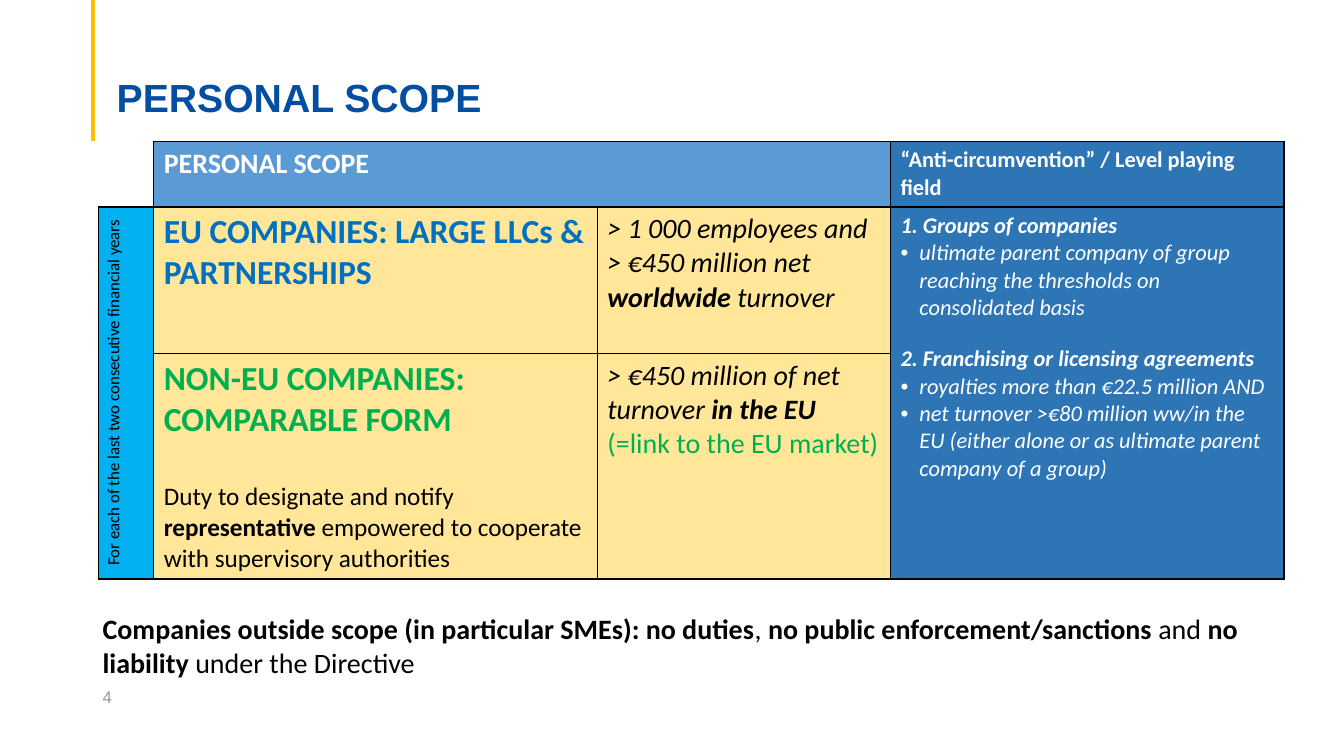
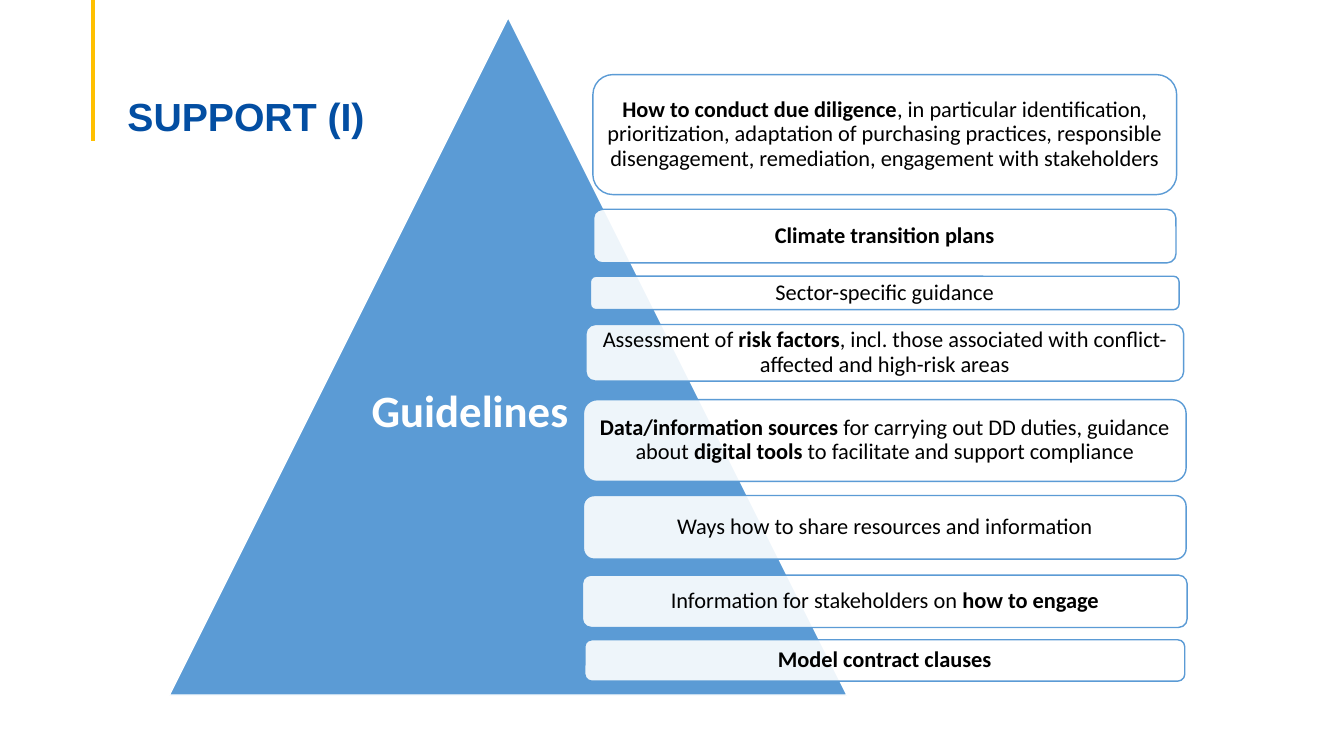
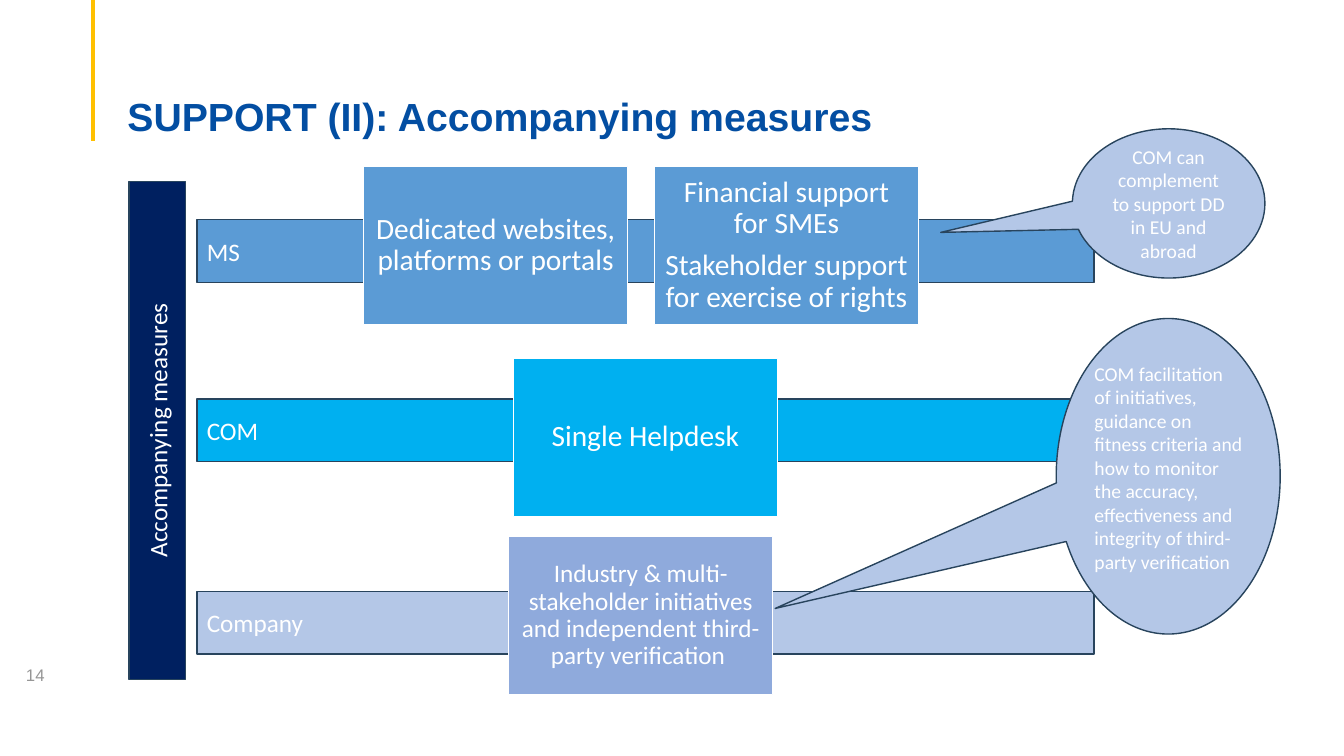
from dataclasses import dataclass
from typing import NamedTuple, Optional

from lxml import etree
from pptx import Presentation
from pptx.dml.color import RGBColor
from pptx.enum.shapes import MSO_CONNECTOR, MSO_SHAPE
from pptx.enum.text import MSO_ANCHOR, PP_ALIGN
from pptx.oxml.ns import qn
from pptx.util import Pt

LEFT, CENTER = PP_ALIGN.LEFT, PP_ALIGN.CENTER
TOP, MIDDLE, BOTTOM = MSO_ANCHOR.TOP, MSO_ANCHOR.MIDDLE, MSO_ANCHOR.BOTTOM
RECT, ROUND_RECT = MSO_SHAPE.RECTANGLE, MSO_SHAPE.ROUNDED_RECTANGLE
TRIANGLE, CALLOUT = MSO_SHAPE.ISOSCELES_TRIANGLE, MSO_SHAPE.OVAL_CALLOUT
STRAIGHT = MSO_CONNECTOR.STRAIGHT

BLACK, WHITE, GREY = "000000", "FFFFFF", "969696"
TITLE_BLUE, GOLD = "034EA2", "FFC000"
BLUE, DARK_BLUE, CYAN, NAVY = "5B9BD5", "2E75B6", "00B0F0", "002060"
PALE_BLUE, SOFT_BLUE, OUTLINE = "B4C7E7", "8FAADC", "28445D"
CREAM, EU_BLUE, GREEN = "FFE699", "0070C0", "00B050"

INSETS = (7.2, 3.6, 7.2, 3.6)


class Run(NamedTuple):
    """A piece of text; None takes the format of its text box."""
    text: str
    bold: Optional[bool] = None
    italic: Optional[bool] = None
    color: Optional[str] = None
    size: Optional[float] = None


@dataclass
class Para:
    runs: list[Run]
    before: float = 0
    bullet: bool = False


class TableCell(NamedTuple):
    row: int
    col: int
    last_row: int
    last_col: int
    fill: str
    paras: list[Para]
    format: dict


class Guideline(NamedTuple):
    top: float
    width: float
    height: float
    runs: list[Run]


class Bar(NamedTuple):
    label: str
    top: float
    fill: str


class Measure(NamedTuple):
    left: float
    top: float
    fill: str
    paras: list[Para]
    size: float = 21
    inset: float = 6.5


def rgb(color: str) -> RGBColor:
    return RGBColor.from_string(color)


def bold(text: str) -> Run:
    return Run(text, bold=True)


def para(*runs, before: float = 0, bullet: bool = False) -> Para:
    return Para([r if isinstance(r, Run) else Run(r) for r in runs], before, bullet)


def add_bullet(p) -> None:
    pPr = p._p.get_or_add_pPr()
    pPr.set("marL", str(Pt(13.5)))
    pPr.set("indent", str(-Pt(13.5)))
    etree.SubElement(pPr, qn("a:buFont")).set("typeface", "Arial")
    etree.SubElement(pPr, qn("a:buChar")).set("char", "•")


def write(tf, paras: list[Para], size: float = 18, color: str = BLACK, font: str = "Calibri",
          is_bold: bool = False, italic: bool = False, align=LEFT, spacing: float = 1.0) -> None:
    for i, item in enumerate(paras):
        p = tf.add_paragraph() if i else tf.paragraphs[0]
        if item.bullet:
            add_bullet(p)
        p.alignment, p.line_spacing = align, spacing
        if item.before:
            p.space_before = Pt(item.before)
        for run in item.runs:
            r = p.add_run()
            r.text = run.text
            r.font.name = font
            r.font.size = Pt(run.size or size)
            r.font.bold = is_bold if run.bold is None else run.bold
            r.font.italic = italic if run.italic is None else run.italic
            r.font.color.rgb = rgb(run.color or color)


def set_frame(tf, anchor, insets) -> None:
    tf.word_wrap = True
    tf.vertical_anchor = anchor
    tf.margin_left, tf.margin_top, tf.margin_right, tf.margin_bottom = map(Pt, insets)


def add_text(s, left, top, width, height, paras, anchor=TOP, insets=INSETS, **fmt) -> None:
    sp = s.shapes.add_textbox(Pt(left), Pt(top), Pt(width), Pt(height))
    set_frame(sp.text_frame, anchor, insets)
    write(sp.text_frame, paras, **fmt)


def add_box(s, kind, left, top, width, height, fill, line, paras=(), insets=INSETS, **fmt):
    sp = s.shapes.add_shape(kind, Pt(left), Pt(top), Pt(width), Pt(height))
    sp.shadow.inherit = False
    sp.fill.solid()
    sp.fill.fore_color.rgb = rgb(fill)
    sp.line.color.rgb = rgb(line)
    sp.line.width = Pt(1)
    set_frame(sp.text_frame, MIDDLE, insets)
    write(sp.text_frame, paras, **fmt)
    return sp


def set_opacity(sp, percent: int) -> None:
    color = sp.fill._xPr.find(qn("a:solidFill"))[0]
    etree.SubElement(color, qn("a:alpha")).set("val", str(percent * 1000))


def set_borders(cell, sides: str) -> None:
    """Draw thin black lines on the given sides, out of LRTB."""
    tcPr = cell._tc.get_or_add_tcPr()
    for i, side in enumerate(sides):
        ln = etree.Element(qn(f"a:ln{side}"), w=str(Pt(1)))
        fill = etree.SubElement(ln, qn("a:solidFill"))
        etree.SubElement(fill, qn("a:srgbClr")).set("val", BLACK)
        tcPr.insert(i, ln)


def new_slide(prs, title: str, left: float = 84, top: float = 38.2):
    s = prs.slides.add_slide(prs.slide_layouts[6])
    rule = s.shapes.add_connector(STRAIGHT, Pt(66.4), Pt(0), Pt(66.4), Pt(100.8))
    rule.line.color.rgb = rgb(GOLD)
    rule.line.width = Pt(2.25)
    etree.SubElement(rule._element.spPr, qn("a:effectLst"))
    add_text(s, left, top, 828, 62, [para(title)], anchor=BOTTOM, insets=(7.2, 3.6, 7.2, 0),
             size=28, font="Arial", color=TITLE_BLUE, is_bold=True, spacing=0.9)
    return s


def add_number(s, number: str, left: float, top: float) -> None:
    add_text(s, left, top, 216, 28.8, [para(number)], anchor=MIDDLE,
             size=12, font="Arial", color=GREY)


def scope_slide(prs) -> None:
    s = new_slide(prs, "PERSONAL SCOPE", left=76.3, top=24.5)
    add_number(s, "4", 66.2, 483)

    white_bold = dict(color=WHITE, is_bold=True)
    cells = [
        TableCell(0, 0, 0, 0, WHITE, [], {}),
        TableCell(0, 1, 0, 2, BLUE, [para("PERSONAL SCOPE")], dict(size=20, **white_bold)),
        TableCell(0, 3, 0, 3, DARK_BLUE, [para("“Anti-circumvention” / Level playing field")],
                  dict(size=16, **white_bold)),
        TableCell(1, 0, 2, 0, CYAN,
                  [para("For each of the last two consecutive financial years")],
                  dict(size=12, align=CENTER)),
        TableCell(1, 1, 1, 1, CREAM, [para("EU COMPANIES: LARGE LLCs & PARTNERSHIPS")],
                  dict(size=24, color=EU_BLUE, is_bold=True)),
        TableCell(1, 2, 1, 2, CREAM,
                  [para("> 1 000 employees and > €450 million net ", bold("worldwide"),
                        " turnover")], dict(size=20, italic=True)),
        TableCell(1, 3, 2, 3, DARK_BLUE, [
            para(bold("1. Groups of companies")),
            para("ultimate parent company of group reaching the thresholds on "
                 "consolidated basis", bullet=True),
            para(bold("2. Franchising or licensing agreements"), before=17),
            para("royalties more than €22.5 million AND", bullet=True),
            para("net turnover >€80 million ww/in the EU (either alone or as ultimate "
                 "parent company of a group)", bullet=True),
        ], dict(size=16, color=WHITE, italic=True)),
        TableCell(2, 1, 2, 1, CREAM, [
            para(Run("NON-EU COMPANIES: COMPARABLE FORM", bold=True, color=GREEN, size=24)),
            para("Duty to designate and notify ", bold("representative"),
                 " empowered to cooperate with supervisory authorities", before=29.3),
        ], dict(size=18)),
        TableCell(2, 2, 2, 2, CREAM,
                  [para("> €450 million of net turnover ", bold("in the EU "),
                        Run("(=link to the EU market)", italic=False, color=GREEN))],
                  dict(size=20, italic=True)),
    ]
    widths, heights = (39.6, 316.8, 209.5, 281), (46.8, 104.8, 161)
    table = s.shapes.add_table(len(heights), len(widths), Pt(70.2), Pt(101),
                               Pt(sum(widths)), Pt(sum(heights))).table
    table.first_row = table.horz_banding = False
    for column, width in zip(table.columns, widths):
        column.width = Pt(width)
    for row, height in zip(table.rows, heights):
        row.height = Pt(height)
    for item in cells:
        first = table.cell(item.row, item.col)
        for row in range(item.row, item.last_row + 1):
            for col in range(item.col, item.last_col + 1):
                cell = table.cell(row, col)
                cell.fill.solid()
                cell.fill.fore_color.rgb = rgb(item.fill)
                set_borders(cell, "LRTB" if row or col else "RB")
        if (item.row, item.col) != (item.last_row, item.last_col):
            first.merge(table.cell(item.last_row, item.last_col))
        write(first.text_frame, item.paras, **item.format)
    table.cell(1, 0)._tc.get_or_add_tcPr().set("vert", "vert270")

    add_text(s, 66.2, 433.4, 851, 69, [para(
        bold("Companies outside scope (in particular SMEs): no duties"), ",",
        bold(" no public enforcement/sanctions "), "and", bold(" no liability "),
        "under the Directive")], size=20)


def guidelines_slide(prs) -> None:
    s = new_slide(prs, "SUPPORT (I)")
    add_box(s, TRIANGLE, 121, 12.5, 484, 484, BLUE, WHITE)
    center = 632
    guidelines = [
        Guideline(53.3, 417, 85.7, [
            bold("How to conduct due diligence"),
            Run(", in particular identification, prioritization, adaptation of purchasing "
                "practices, responsible disengagement, remediation, engagement with "
                "stakeholders")]),
        Guideline(149.5, 416, 38.3, [bold("Climate transition plans")]),
        Guideline(197.3, 420.5, 23.9, [Run("Sector-specific guidance")]),
        Guideline(231.8, 427, 40.4, [
            Run("Assessment of "), bold("risk factors"),
            Run(", incl. those associated with conflict-affected and high-risk areas")]),
        Guideline(285.5, 430.5, 58.4, [
            bold("Data/information sources "),
            Run("for carrying out DD duties, guidance about "), bold("digital tools "),
            Run("to facilitate and support compliance")]),
        Guideline(354, 430.5, 45.4, [Run("Ways how to share resources and information")]),
        Guideline(410.8, 432, 37.4, [
            Run("Information for stakeholders on "), bold("how to engage")]),
        Guideline(457, 428.5, 29.5, [bold("Model contract clauses")]),
    ]
    for g in guidelines:
        sp = add_box(s, ROUND_RECT, center - g.width / 2, g.top, g.width, g.height, WHITE, BLUE,
                     [Para(g.runs)], insets=(4.8,) * 4, size=16, align=CENTER, spacing=0.9)
        set_opacity(sp, 90)
    add_text(s, 256.3, 270, 159, 46, [para("Guidelines")],
             size=32, color=WHITE, is_bold=True, align=CENTER)


def measures_slide(prs) -> None:
    s = new_slide(prs, "SUPPORT (II): Accompanying measures")
    add_number(s, "14", 11.5, 467.3)

    bars = [Bar("Company", 422.5, PALE_BLUE), Bar("COM", 285, CYAN), Bar("MS", 157, BLUE)]
    for bar in bars:
        add_box(s, RECT, 140.6, bar.top, 641, 44.8, bar.fill, OUTLINE,
                [para(bar.label)], color=WHITE)

    measures = [
        Measure(259.7, 118.8, BLUE, [para("Dedicated websites, platforms or portals")]),
        Measure(467.5, 118.8, BLUE, [
            para("Financial support for SMEs"),
            para("Stakeholder support for exercise of rights", before=7.35)]),
        Measure(366.7, 256, CYAN, [para("Single Helpdesk")]),
        Measure(363.4, 383.2, SOFT_BLUE, [
            para("Industry & multi-stakeholder initiatives and independent "
                 "third-party verification ")], size=18, inset=5),
    ]
    for m in measures:
        add_box(s, RECT, m.left, m.top, 188.6, 113, m.fill, WHITE, m.paras,
                insets=(m.inset,) * 4, size=m.size, color=WHITE, align=CENTER, spacing=0.9)

    facilitation = add_box(s, CALLOUT, 754.5, 227.5, 160, 225.4, PALE_BLUE, OUTLINE)
    facilitation.adjustments[0], facilitation.adjustments[1] = -1.755, 0.419
    add_text(s, 774.7, 254.6, 124, 181, [
        para("COM facilitation"),
        para("of initiatives, guidance on fitness criteria and how to monitor the accuracy, "
             "effectiveness and integrity of third-party verification")],
        size=14, color=WHITE)

    sidebar = add_box(s, RECT, -65.5, 287.3, 355.7, 40.3, NAVY, OUTLINE,
                      [para("Accompanying measures")], color=WHITE, align=CENTER)
    sidebar.rotation = 270

    complement = add_box(s, CALLOUT, 766, 92, 137.5, 106.6, PALE_BLUE, OUTLINE,
                         [para("COM can complement to support DD in EU and abroad")],
                         size=14, color=WHITE, align=CENTER)
    complement.adjustments[0], complement.adjustments[1] = -1.184, 0.194


def main() -> None:
    prs = Presentation()
    prs.slide_width, prs.slide_height = Pt(960), Pt(540)
    scope_slide(prs)
    guidelines_slide(prs)
    measures_slide(prs)
    prs.save("out.pptx")


if __name__ == "__main__":
    main()
